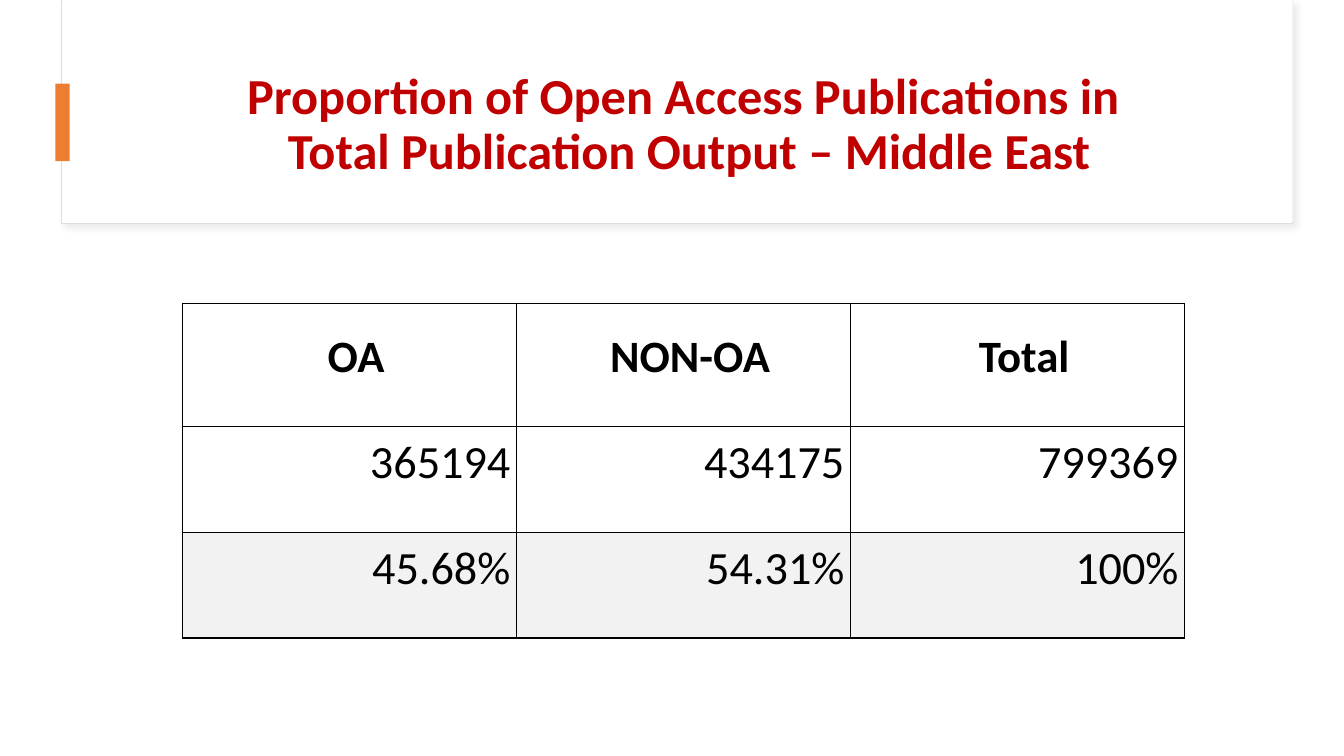
from dataclasses import dataclass

from lxml import etree
from pptx import Presentation
from pptx.dml.color import RGBColor
from pptx.enum.shapes import MSO_SHAPE
from pptx.enum.text import MSO_ANCHOR, PP_ALIGN
from pptx.oxml import parse_xml
from pptx.oxml.ns import nsdecls, qn
from pptx.util import Inches, Pt

RECTANGLE = MSO_SHAPE.RECTANGLE
MIDDLE, BOTTOM = MSO_ANCHOR.MIDDLE, MSO_ANCHOR.BOTTOM
CENTER, RIGHT = PP_ALIGN.CENTER, PP_ALIGN.RIGHT


@dataclass(frozen=True)
class Theme:
    font: str = "Calibri"
    title_size: float = 36
    header_size: float = 32
    value_size: float = 33
    panel: str = "FFFFFF"
    panel_line: str = "DEDEDE"
    shadow: str = "D9D9D9"
    title: str = "C00000"
    accent: str = "ED7D31"
    text: str = "000000"
    border: str = "000000"
    shaded_row: str = "F2F2F2"


@dataclass(frozen=True)
class Box:
    left: float
    top: float
    width: float
    height: float

    def lengths(self):
        return [Inches(n) for n in (self.left, self.top, self.width, self.height)]


@dataclass(frozen=True)
class Row:
    values: tuple[str, ...]
    height: float
    size: float
    bold: bool = False
    alignment: PP_ALIGN = RIGHT
    fill: str | None = None


THEME = Theme()
TITLE = "Proportion of Open Access Publications in\v Total Publication Output – Middle East"
HEADER_PANEL = Box(0.61, 0.01, 12.21, 2.21)
HEADER_COVER = Box(0.62, 0, 12.2, 2.2)
TITLE_BOX = Box(1.22, 0.6, 11.12, 1.29)
ACCENT_BAR = Box(0.55, 0.83, 0.14, 0.77)
TABLE_BOX = Box(1.81, 3.01, 9.94, 3.32)
ROWS = (
    Row(("OA", "NON-OA", "Total"), 1.22, THEME.header_size, True, CENTER),
    Row(("365194", "434175", "799369"), 1.05, THEME.value_size),
    Row(("45.68%", "54.31%", "100%"), 1.05, THEME.value_size, fill=THEME.shaded_row),
)


def color(value: str) -> RGBColor:
    return RGBColor.from_string(value)


def style_paragraph(paragraph, size: float, value: str, bold: bool, alignment: PP_ALIGN) -> None:
    paragraph.alignment = alignment
    font = paragraph.font
    font.name, font.size, font.bold = THEME.font, Pt(size), bold
    font.color.rgb = color(value)


def add_rectangle(slide, box: Box, fill: str, line: str | None = None):
    shape = slide.shapes.add_shape(RECTANGLE, *box.lengths())
    shape.shadow.inherit = False
    shape.fill.solid()
    shape.fill.fore_color.rgb = color(fill)
    if line:
        shape.line.color.rgb = color(line)
        shape.line.width = Pt(0.75)
    else:
        shape.line.fill.background()
    return shape


def add_soft_shadow(shape) -> None:
    effects = shape._element.spPr.find(qn("a:effectLst"))
    effects.append(parse_xml(
        f'<a:outerShdw {nsdecls("a")} blurRad="{Pt(4)}" dist="{Pt(3)}" dir="{45 * 60000}">'
        f'<a:srgbClr val="{THEME.shadow}"><a:alpha val="50000"/></a:srgbClr></a:outerShdw>'
    ))


def add_title(slide) -> None:
    frame = slide.shapes.add_textbox(*TITLE_BOX.lengths()).text_frame
    frame.word_wrap = True
    frame.vertical_anchor = MIDDLE
    frame.text = TITLE.replace("\v", "\v")
    paragraph = frame.paragraphs[0]
    paragraph.text = TITLE
    paragraph.line_spacing = 0.9
    style_paragraph(paragraph, THEME.title_size, THEME.title, True, CENTER)


def set_borders(cell) -> None:
    properties = cell._tc.get_or_add_tcPr()
    for side in ("a:lnL", "a:lnR", "a:lnT", "a:lnB"):
        line = etree.SubElement(properties, qn(side), w=str(Pt(1)))
        fill = etree.SubElement(line, qn("a:solidFill"))
        etree.SubElement(fill, qn("a:srgbClr"), val=THEME.border)


def fill_cell(cell, text: str, row: Row) -> None:
    cell.margin_left, cell.margin_top = Inches(0.19), Inches(0.05)
    cell.margin_right, cell.margin_bottom = Inches(0.06), Inches(0.41)
    cell.vertical_anchor = BOTTOM
    set_borders(cell)
    if row.fill:
        cell.fill.solid()
        cell.fill.fore_color.rgb = color(row.fill)
    else:
        cell.fill.background()
    cell.text = text
    style_paragraph(cell.text_frame.paragraphs[0], row.size, THEME.text, row.bold, row.alignment)


def add_publication_table(slide) -> None:
    column_count = len(ROWS[0].values)
    table = slide.shapes.add_table(len(ROWS), column_count, *TABLE_BOX.lengths()).table
    table.first_row = table.horz_banding = False
    for column in table.columns:
        column.width = Inches(TABLE_BOX.width / column_count)
    for row_index, row in enumerate(ROWS):
        table.rows[row_index].height = Inches(row.height)
        for column_index, text in enumerate(row.values):
            fill_cell(table.cell(row_index, column_index), text, row)


def main() -> None:
    presentation = Presentation()
    presentation.slide_width, presentation.slide_height = Inches(13.33), Inches(7.5)
    slide = presentation.slides.add_slide(presentation.slide_layouts[6])
    add_soft_shadow(add_rectangle(slide, HEADER_PANEL, THEME.panel, THEME.panel_line))
    add_rectangle(slide, HEADER_COVER, THEME.panel)
    add_title(slide)
    add_rectangle(slide, ACCENT_BAR, THEME.accent)
    add_publication_table(slide)
    presentation.save("out.pptx")


if __name__ == "__main__":
    main()
